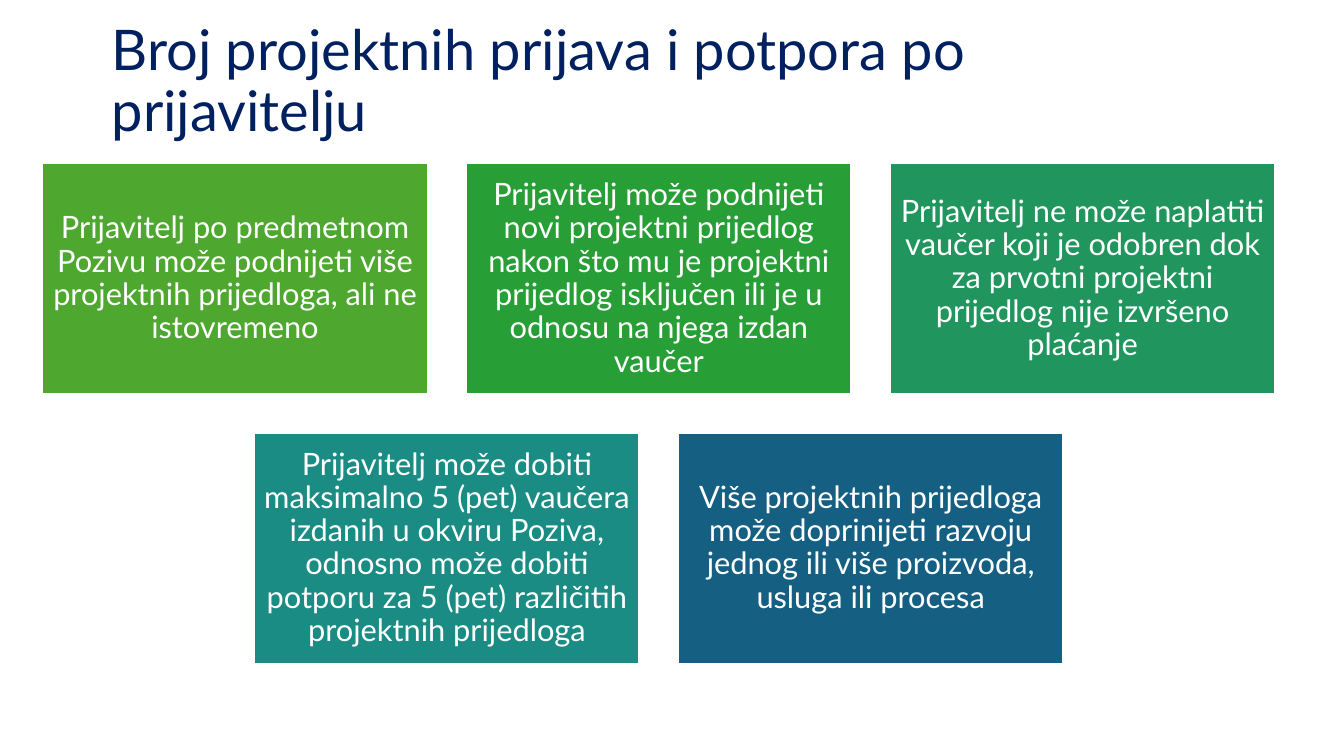
from pptx import Presentation
from pptx import util as u
from pptx.dml.color import RGBColor
from pptx.enum import shapes, text

NAVY = RGBColor(0x00, 0x20, 0x60)
WHITE = RGBColor(0xFF, 0xFF, 0xFF)
LEAF = RGBColor(0x4E, 0xA7, 0x2E)
GREEN = RGBColor(0x27, 0x9F, 0x36)
EMERALD = RGBColor(0x20, 0x96, 0x5E)
TEAL = RGBColor(0x1A, 0x8C, 0x83)
BLUE = RGBColor(0x15, 0x60, 0x82)

# Card grid, in points
CARD_WIDTH, CARD_HEIGHT = 275.2, 165
COLUMN_STEP, ROW_STEP = 302.7, 192.5
GRID_CENTRE, GRID_TOP = 470.6, 116.7

CARD_ROWS = [
    [
        (LEAF, "Prijavitelj po predmetnom Pozivu može podnijeti više projektnih "
               "prijedloga, ali ne istovremeno"),
        (GREEN, "Prijavitelj može podnijeti novi projektni prijedlog nakon što mu je "
                "projektni prijedlog isključen ili je u odnosu na njega izdan vaučer"),
        (EMERALD, "Prijavitelj ne može naplatiti vaučer koji je odobren dok za prvotni "
                  "projektni prijedlog nije izvršeno plaćanje"),
    ],
    [
        (TEAL, "Prijavitelj može dobiti maksimalno 5 (pet) vaučera izdanih u okviru "
               "Poziva, odnosno može dobiti potporu za 5 (pet) različitih projektnih "
               "prijedloga"),
        (BLUE, "Više projektnih prijedloga može doprinijeti razvoju jednog ili više "
               "proizvoda, usluga ili procesa"),
    ],
]


class SlideBuilder:
    font_name = "Lato"
    title_size = 40
    card_size = 22
    card_inset = 6.5

    def __init__(self, page):
        self.page = page

    def add_words(self, box, words, size, colour, align):
        frame = box.text_frame
        frame.word_wrap = True
        frame.vertical_anchor = text.MSO_ANCHOR.MIDDLE
        para = frame.paragraphs[0]
        para.alignment = align
        para.line_spacing = 0.9
        span = para.add_run()
        span.text = words
        span.font.name = self.font_name
        span.font.size = u.Pt(size)
        span.font.color.rgb = colour

    def title(self, words, left, top, width, height):
        box = self.page.shapes.add_textbox(
            u.Pt(left), u.Pt(top), u.Pt(width), u.Pt(height))
        self.add_words(box, words, self.title_size, NAVY, text.PP_ALIGN.LEFT)

    def card(self, words, fill, left, top):
        box = self.page.shapes.add_shape(
            shapes.MSO_SHAPE.RECTANGLE,
            u.Pt(left), u.Pt(top), u.Pt(CARD_WIDTH), u.Pt(CARD_HEIGHT))
        box.shadow.inherit = False
        box.fill.solid()
        box.fill.fore_color.rgb = fill
        box.line.color.rgb = WHITE
        box.line.width = u.Pt(1.5)
        frame = box.text_frame
        frame.margin_left = frame.margin_right = u.Pt(self.card_inset)
        frame.margin_top = frame.margin_bottom = u.Pt(self.card_inset)
        self.add_words(box, words, self.card_size, WHITE, text.PP_ALIGN.CENTER)


def main():
    deck = Presentation()
    deck.slide_width, deck.slide_height = u.Pt(960), u.Pt(540)
    builder = SlideBuilder(deck.slides.add_slide(deck.slide_layouts[6]))

    # Heading
    builder.title("Broj projektnih prijava i potpora po prijavitelju",
                  72.7, 24.5, 790.6, 69.1)

    # Cards, each row centred on the grid
    for row, cards in enumerate(CARD_ROWS):
        row_width = COLUMN_STEP * (len(cards) - 1) + CARD_WIDTH
        row_left = GRID_CENTRE - row_width / 2
        for column, (fill, words) in enumerate(cards):
            builder.card(words, fill, row_left + column * COLUMN_STEP,
                         GRID_TOP + row * ROW_STEP)

    deck.save("out.pptx")


if __name__ == "__main__":
    main()
